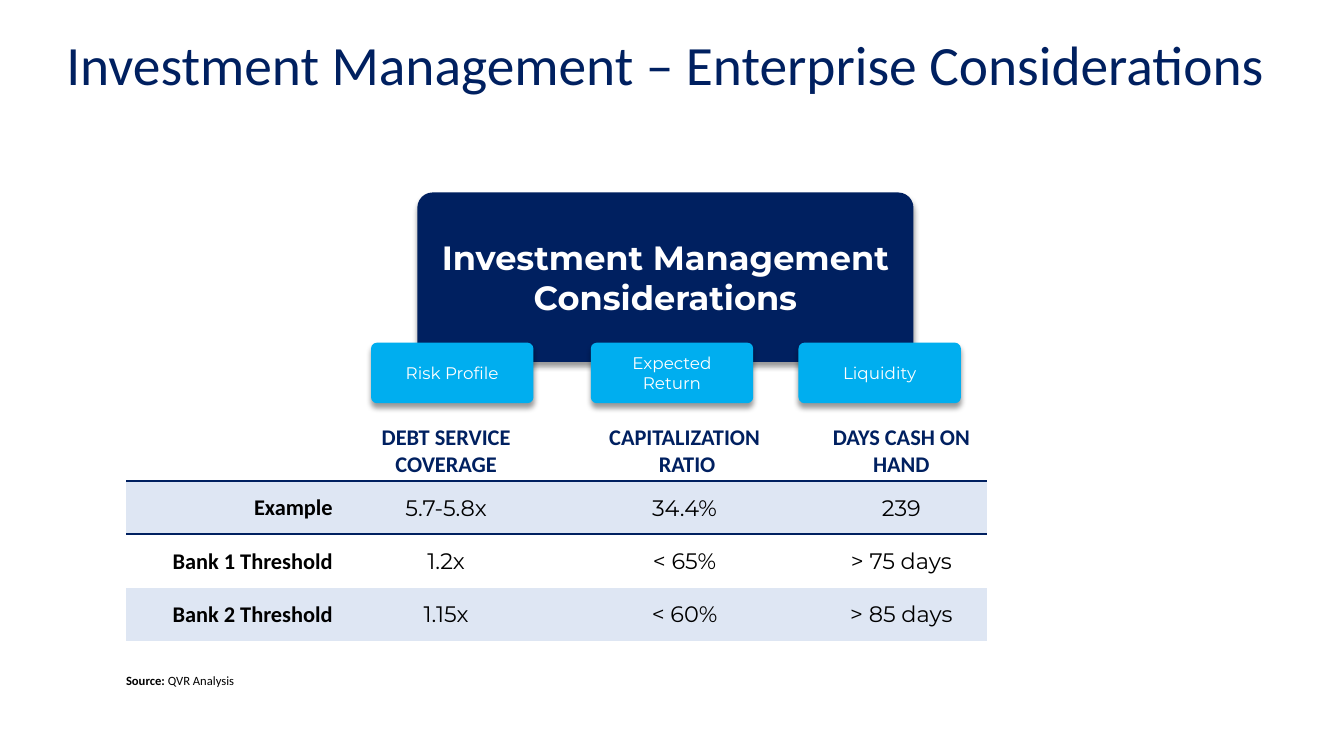
from dataclasses import dataclass

from lxml import etree
from pptx import Presentation
from pptx import util as u
from pptx.dml.color import RGBColor
from pptx.enum import shapes, text
from pptx.oxml import ns, parse_xml

COLORS = {"navy": "002060", "sky": "00AEEF", "band": "DEE6F3",
          "black": "000000", "white": "FFFFFF"}
BODY, ACCENT = "Calibri", "Montserrat"
LEFT, CENTER, RIGHT = text.PP_ALIGN.LEFT, text.PP_ALIGN.CENTER, text.PP_ALIGN.RIGHT
NO_GRID_STYLE = "{2D5ABB26-0587-4C30-8999-92F81FD0307C}"


@dataclass
class Box:
    label: str
    left: float
    top: float
    width: float
    height: float
    color: str
    size: float
    bold: bool = False


@dataclass
class Column:
    width: float
    margin_left: float
    cells: tuple[str, ...]


BOXES = [Box("Investment Management Considerations", 4.15, 1.92, 4.9, 1.66, "navy", 24, True)]
BOXES += [Box(label, left, 3.41, 1.59, 0.58, "sky", 12)
          for label, left in (("Risk Profile", 3.69), ("Expected Return", 5.87),
                              ("Liquidity", 7.93))]

COLUMNS = [
    Column(2.06, 0.11, ("", "Example", "Bank 1 Threshold", "Bank 2 Threshold")),
    Column(2.13, 0.11, ("DEBT SERVICE COVERAGE", "5.7-5.8x", "1.2x", "1.15x")),
    Column(2.65, 0.06, ("CAPITALIZATION\n RATIO", "34.4%", "< 65%", "< 60%")),
    Column(1.7, 0.01, ("DAYS CASH ON HAND", "239", "> 75 days", "> 85 days")),
]
ROW_HEIGHTS = (0.6, 0.53, 0.53, 0.53)


def rgb(name: str) -> RGBColor:
    return RGBColor.from_string(COLORS[name])


def add_text(p, content: str, *, size: float, color: str, font: str = BODY,
             bold: bool = False, align=LEFT) -> None:
    """Append content to a paragraph; a newline becomes a line break."""
    p.alignment = align
    for i, line in enumerate(content.split("\n")):
        if i:
            p.add_line_break()
        r = p.add_run()
        r.text = line
        r.font.size, r.font.name, r.font.bold = u.Pt(size), font, bold
        r.font.color.rgb = rgb(color)


def add_shadow(sp) -> None:
    sp._element.spPr.append(parse_xml(
        f'<a:effectLst {ns.nsdecls("a")}>'
        f'<a:outerShdw blurRad="{u.Pt(4)}" dist="{u.Pt(3)}" dir="5400000" rotWithShape="0">'
        f'<a:srgbClr val="{COLORS["black"]}"><a:alpha val="40000"/></a:srgbClr>'
        '</a:outerShdw></a:effectLst>'))


def add_box(s, box: Box) -> None:
    sp = s.shapes.add_shape(shapes.MSO_SHAPE.ROUNDED_RECTANGLE, u.Inches(box.left),
                            u.Inches(box.top), u.Inches(box.width), u.Inches(box.height))
    sp.adjustments[0] = 0.085
    sp.fill.solid()
    sp.fill.fore_color.rgb = sp.line.color.rgb = rgb(box.color)
    sp.line.width = u.Pt(1.5)
    add_shadow(sp)
    tf = sp.text_frame
    tf.word_wrap = True
    tf.vertical_anchor = text.MSO_ANCHOR.MIDDLE
    add_text(tf.paragraphs[0], box.label, size=box.size, color="white",
             font=ACCENT, bold=box.bold, align=CENTER)


def add_border(cell, side: str) -> None:
    """Draw a navy rule on the cell's top (T) or bottom (B)."""
    ln = etree.Element(ns.qn(f"a:ln{side}"), w=str(u.Pt(1.5)))
    fill = etree.SubElement(ln, ns.qn("a:solidFill"))
    etree.SubElement(fill, ns.qn("a:srgbClr"), val=COLORS["navy"])
    cell._tc.get_or_add_tcPr().insert(0, ln)


def format_cell(cell, row: int, col: int) -> None:
    column = COLUMNS[col]
    cell.vertical_anchor = text.MSO_ANCHOR.MIDDLE
    cell.margin_left = u.Inches(column.margin_left)
    cell.margin_top = cell.margin_right = u.Inches(0.01)
    cell.margin_bottom = 0
    if row % 2:
        cell.fill.solid()
        cell.fill.fore_color.rgb = rgb("band")
    else:
        cell.fill.background()
    if row < 2:
        add_border(cell, "BT"[row])
    heading = row == 0 or col == 0
    if column.cells[row]:
        add_text(cell.text_frame.paragraphs[0], column.cells[row], size=16,
                 color="black" if row else "navy", font=BODY if heading else ACCENT,
                 bold=heading, align=CENTER if col else RIGHT)


def add_threshold_table(s) -> None:
    table = s.shapes.add_table(
        len(ROW_HEIGHTS), len(COLUMNS), u.Inches(1.25), u.Inches(4.17),
        u.Inches(sum(c.width for c in COLUMNS)), u.Inches(sum(ROW_HEIGHTS))).table
    table.first_row = table.horz_banding = False
    table._tbl.tblPr.find(ns.qn("a:tableStyleId")).text = NO_GRID_STYLE
    for row, height in enumerate(ROW_HEIGHTS):
        table.rows[row].height = u.Inches(height)
    for col, column in enumerate(COLUMNS):
        table.columns[col].width = u.Inches(column.width)
        for row in range(len(ROW_HEIGHTS)):
            format_cell(table.cell(row, col), row, col)


def add_title(s) -> None:
    sp = s.shapes.title
    sp.left, sp.top = u.Inches(0.36), u.Inches(0.3)
    sp.width, sp.height = u.Inches(12.48), u.Inches(0.74)
    tf = sp.text_frame
    tf.vertical_anchor = text.MSO_ANCHOR.MIDDLE
    tf.auto_size = text.MSO_AUTO_SIZE.NONE
    p = tf.paragraphs[0]
    p.line_spacing = 0.9
    add_text(p, "Investment Management – Enterprise Considerations",
             size=39.6, color="navy", align=CENTER)


def add_source(s) -> None:
    tf = s.shapes.add_textbox(u.Inches(1.25), u.Inches(6.68),
                              u.Inches(9.01), u.Inches(0.15)).text_frame
    tf.word_wrap = True
    tf.margin_left = tf.margin_top = tf.margin_right = tf.margin_bottom = 0
    p = tf.paragraphs[0]
    add_text(p, "Source: ", size=9, color="black", bold=True)
    add_text(p, "QVR Analysis", size=9, color="black")


def main() -> None:
    prs = Presentation()
    prs.slide_width, prs.slide_height = u.Inches(13.33), u.Inches(7.5)
    s = prs.slides.add_slide(prs.slide_layouts[5])
    add_title(s)
    add_source(s)
    add_threshold_table(s)
    for box in BOXES:
        add_box(s, box)
    prs.save("out.pptx")


if __name__ == "__main__":
    main()
